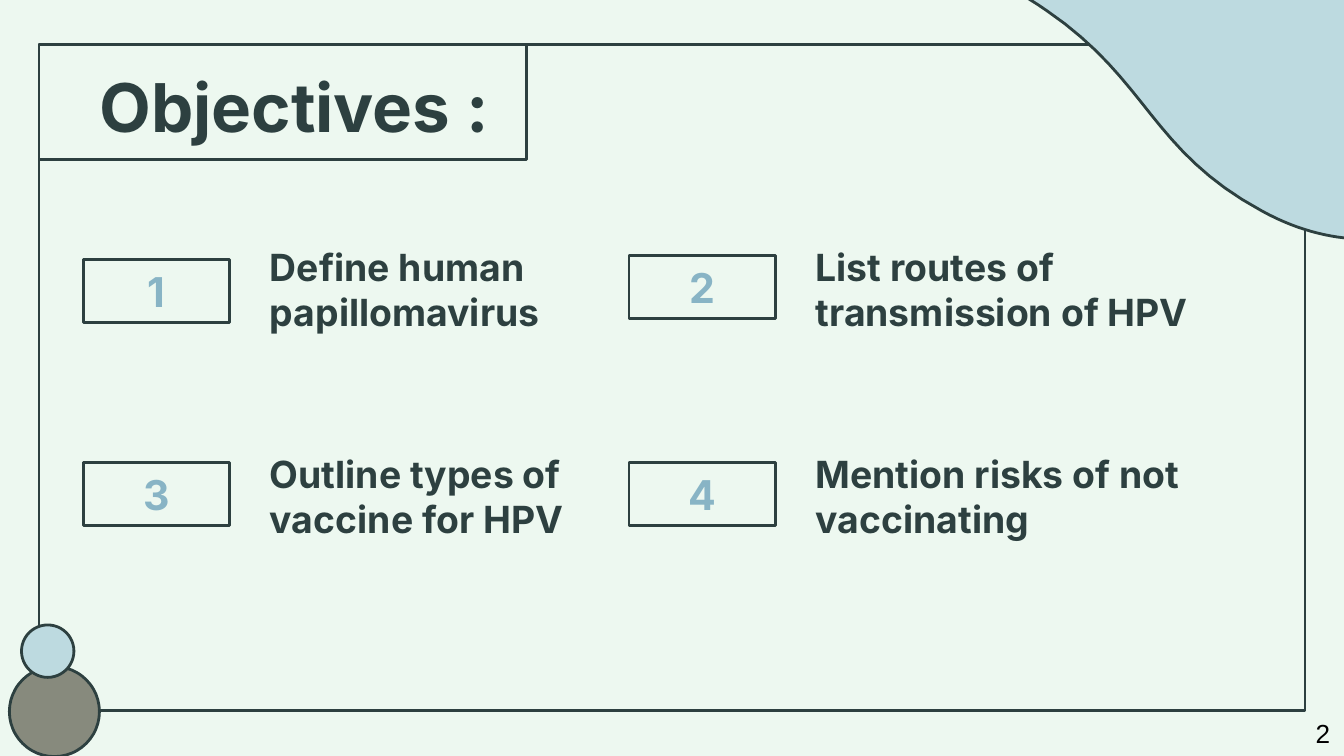
from dataclasses import dataclass

from pptx import Presentation
from pptx.dml.color import RGBColor
from pptx.enum.shapes import MSO_SHAPE
from pptx.enum.text import MSO_ANCHOR, MSO_AUTO_SIZE, PP_ALIGN
from pptx.util import Inches, Pt

RECT, OVAL = MSO_SHAPE.RECTANGLE, MSO_SHAPE.OVAL
MIDDLE, TOP = MSO_ANCHOR.MIDDLE, MSO_ANCHOR.TOP
LEFT, CENTER = PP_ALIGN.LEFT, PP_ALIGN.CENTER
FIXED = MSO_AUTO_SIZE.NONE
GROW = MSO_AUTO_SIZE.SHAPE_TO_FIT_TEXT

INK, MINT, SKY, STONE, BLUE = "2D4040", "EDF8F0", "BDDAE0", "878A7D", "88B4C5"
STEPS = 16


@dataclass
class Goal:
    label: str
    text: str
    col: int
    row: int
    width: float
    drop: float = 0


@dataclass
class Dot:
    left: float
    top: float
    size: float
    color: str


GOALS = [
    Goal("1", "Define human papillomavirus", 0, 0, 2.58, 0.03),
    Goal("2", "List routes of transmission of HPV", 1, 0, 3.15),
    Goal("3", "Outline types of vaccine for HPV", 0, 1, 2.58),
    Goal("4", "Mention risks of not vaccinating", 1, 1, 3.59),
]
DOTS = [Dot(0.07, 4.96, 0.67, STONE), Dot(0.16, 4.65, 0.39, SKY)]
CURVES = [
    ((6.57, -0.17), (6.69, -0.24), (6.91, -0.24)),
    ((7.12, -0.24), (7.42, -0.18), (7.79, 0.08)),
    ((8.55, 0.6), (8.56, 1.12), (9.39, 1.57)),
    ((9.68, 1.73), (9.95, 1.78), (10.17, 1.78)),
    ((10.52, 1.78), (10.75, 1.64), (10.75, 1.64)),
]


def paint(color: str) -> RGBColor:
    return RGBColor.from_string(color)


def style(shape, fill: str | None = None) -> None:
    if fill:
        shape.fill.solid()
        shape.fill.fore_color.rgb = paint(fill)
    else:
        shape.fill.background()
    shape.line.color.rgb = paint(INK)
    shape.line.width = Pt(1.5)


def add_form(slide, kind, left: float, top: float, width: float,
             height: float, fill: str | None = None):
    shape = slide.shapes.add_shape(
        kind, Inches(left), Inches(top), Inches(width), Inches(height))
    shape.shadow.inherit = False
    style(shape, fill)
    return shape


def write(shape, text: str, size: float, color: str = INK, font: str = "Inter",
          bold: bool = True, align=LEFT, anchor=MIDDLE, wrap: bool = True,
          fit=FIXED, inset=(0.1, 0.1, 0.1, 0.1)) -> None:
    frame = shape.text_frame
    frame.text = text
    frame.word_wrap = wrap
    frame.auto_size = fit
    frame.vertical_anchor = anchor
    frame.margin_left, frame.margin_top, frame.margin_right, \
        frame.margin_bottom = map(Inches, inset)
    line = frame.paragraphs[0]
    line.alignment = align
    face = line.runs[0].font
    face.name, face.size, face.bold = font, Pt(size), bold
    face.color.rgb = paint(color)


def add_text(slide, left: float, top: float, width: float, height: float):
    return slide.shapes.add_textbox(
        Inches(left), Inches(top), Inches(width), Inches(height))


def trace(start, curves) -> list:
    points = []
    for one, two, end in curves:
        for step in range(1, STEPS + 1):
            t = step / STEPS
            u = 1 - t
            points.append(tuple(
                u**3 * a + 3 * u * u * t * b + 3 * u * t * t * c + t**3 * d
                for a, b, c, d in zip(start, one, two, end)))
        start = end
    return points


def add_wave(slide) -> None:
    bend = (6.57, -0.17)
    points = [(6.35, -1.36), bend, *trace(bend, CURVES)]
    pen = slide.shapes.build_freeform(Inches(10.02), Inches(-2.03))
    pen.add_line_segments([(Inches(x), Inches(y)) for x, y in points])
    wave = pen.convert_to_shape()
    wave.shadow.inherit = False
    style(wave, SKY)


def add_goal(slide, goal: Goal) -> None:
    left = 0.62 + 4.06 * goal.col
    top = 1.9 + 1.54 * goal.row
    box = add_form(slide, RECT, left, top + goal.drop, 1.09, 0.47)
    write(box, goal.label, 22, BLUE, align=CENTER)
    write(add_text(slide, left + 1.29, top, goal.width, 0.5), goal.text, 20)


def main() -> None:
    deck = Presentation()
    deck.slide_width = Inches(10)
    deck.slide_height = Inches(10) * 9 // 16
    slide = deck.slides.add_slide(deck.slide_layouts[5])
    slide.background.fill.solid()
    slide.background.fill.fore_color.rgb = paint(MINT)

    title = slide.shapes.title
    title.left, title.top = Inches(0.29), Inches(0.33)
    title.width, title.height = Inches(3.63), Inches(0.86)
    style(title)
    write(title, "Objectives :", 36, inset=(0.45, 0.1, 0.1, 0.05))

    add_form(slide, RECT, 0.29, 0.33, 9.42, 4.96)
    add_wave(slide)
    for dot in DOTS:
        add_form(slide, OVAL, dot.left, dot.top, dot.size, dot.size, dot.color)
    for goal in GOALS:
        add_goal(slide, goal)

    write(add_text(slide, 9.69, 5.29, 0.31, 0.34), "2", 14, "000000", "Arial",
          False, anchor=TOP, wrap=False, fit=GROW,
          inset=(0.1, 0.05, 0.1, 0.05))
    deck.save("out.pptx")


if __name__ == "__main__":
    main()
